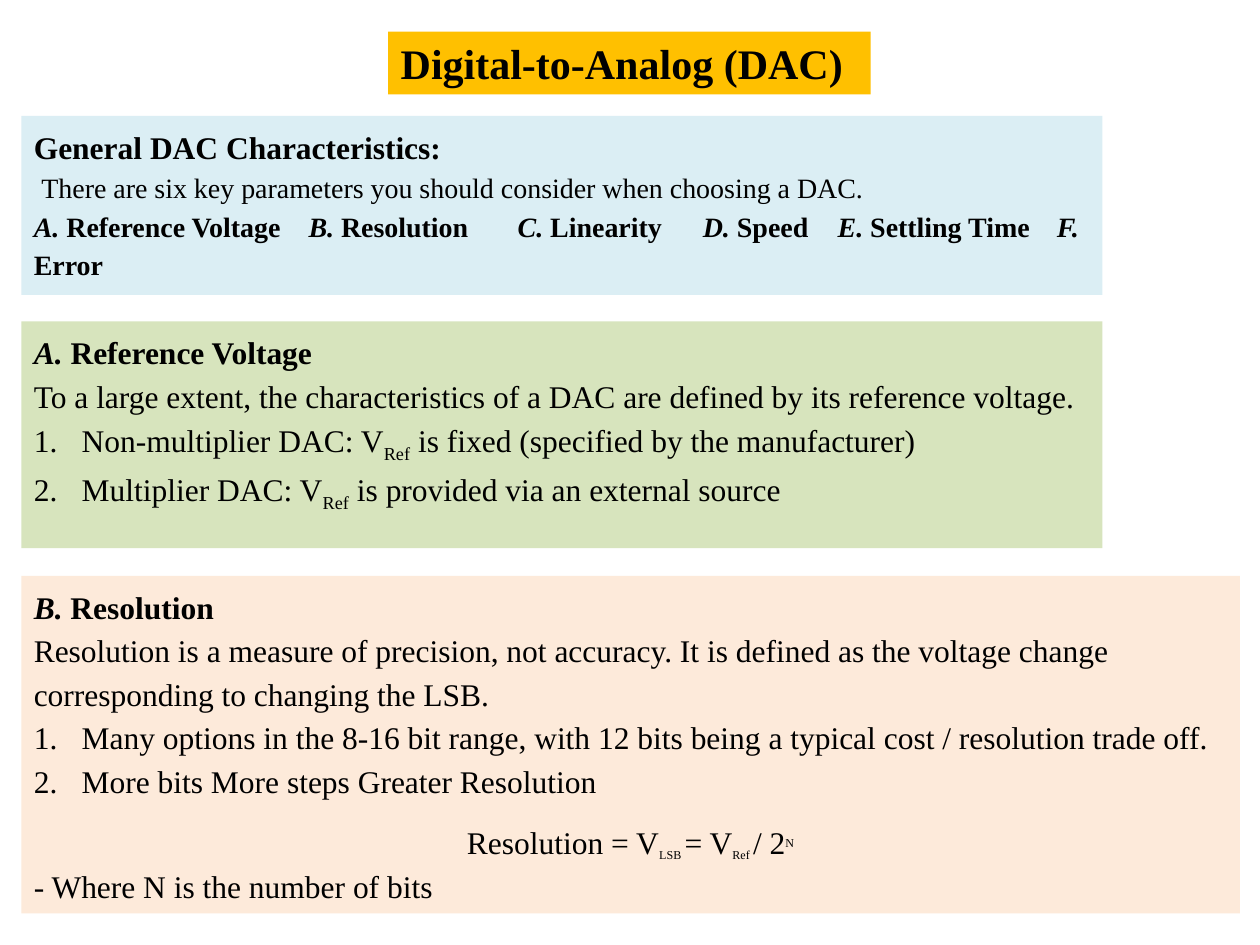
from lxml import etree
from pptx import Presentation
from pptx.dml.color import RGBColor
from pptx.enum.shapes import MSO_SHAPE
from pptx.enum.text import MSO_ANCHOR, MSO_AUTO_SIZE, PP_ALIGN
from pptx.oxml.ns import qn
from pptx.util import Inches, Pt

RECT = MSO_SHAPE.RECTANGLE
TOP = MSO_ANCHOR.TOP
NO_FIT = MSO_AUTO_SIZE.NONE
LEFT, CENTER = PP_ALIGN.LEFT, PP_ALIGN.CENTER

THEME = {
    "font": "Times New Roman", "text": "000000",
    "title_fill": "FFC000", "blue": "DBEEF4", "green": "D7E4BD", "peach": "FDEADA",
    "title": 24, "body": 18, "small": 16, "script": 12, "spacing": 1.15,
}
BASELINES = {"sub": "-25000", "super": "30000"}
LEFT_EDGE = 0.17
NUMBER_INDENT = 0.38

TITLE = "Digital-to-Analog (DAC)"
PARAMETERS = [("A.", "Reference Voltage"), ("B.", "Resolution"), ("C.", "Linearity"),
              ("D.", "Speed"), ("E.", "Settling Time"), ("F.", "Error")]
PARAMETER_TABS = [2.18, 3.84, 5.31, 6.38, 8.12]


def heading(letter, name):
    return {"runs": [(letter, "bold italic"), (" " + name, "bold")]}


def parameter_runs():
    runs = []
    for i, (letter, name) in enumerate(PARAMETERS):
        gap = "\t" if i < len(PARAMETERS) - 1 else ""
        runs += [(letter, "bold italic"), (f" {name}{gap}", "bold")]
    return runs


PANELS = [
    {"top": 0.92, "width": 8.58, "height": 1.42, "fill": "blue", "paragraphs": [
        {"runs": [("General DAC Characteristics:", "bold")]},
        {"size": "small", "margin": 0.06, "runs": [
            ("There are six key parameters you should consider when choosing a DAC.", "")]},
        {"size": "small", "tabs": PARAMETER_TABS, "runs": parameter_runs()},
    ]},
    {"top": 2.55, "width": 8.58, "height": 1.8, "fill": "green", "paragraphs": [
        heading(*PARAMETERS[0]),
        {"runs": [("To a large extent, the characteristics of a DAC are defined by "
                   "its reference voltage.", "")]},
        {"numbered": True, "runs": [
            ("Non-multiplier DAC: V", ""), ("Ref", "sub"),
            (" is fixed (specified by the manufacturer)", "")]},
        {"numbered": True, "runs": [
            ("Multiplier DAC: V", ""), ("Ref", "sub"),
            (" is provided via an external source", "")]},
    ]},
    {"top": 4.57, "width": 9.67, "height": 2.68, "fill": "peach", "paragraphs": [
        heading(*PARAMETERS[1]),
        {"runs": [("Resolution is a measure of precision, not accuracy. It is defined as "
                   "the voltage change corresponding to changing the LSB.", "")]},
        {"numbered": True, "runs": [
            ("Many options in the 8-16 bit range, with 12 bits being a typical cost / "
             "resolution trade off.", "")]},
        {"numbered": True, "after": 10, "runs": [
            ("More bits More steps Greater Resolution", "")]},
        {"align": CENTER, "runs": [
            ("Resolution = V", ""), ("LSB ", "sub script"), ("= V", ""),
            ("Ref ", "sub script"), ("/ 2", ""), ("N", "super script")]},
        {"after": 10, "runs": [("- Where N is the number of bits", "")]},
    ]},
]


def color(name):
    return RGBColor.from_string(THEME[name])


def place(sp, left, top, width, height):
    sp.left, sp.top = Inches(left), Inches(top)
    sp.width, sp.height = Inches(width), Inches(height)


def style_run(r, style, size):
    words = style.split()
    font = r.font
    font.name = THEME["font"]
    font.size = Pt(THEME["script" if "script" in words else size])
    font.color.rgb = color("text")
    font.bold = "bold" in words
    font.italic = "italic" in words
    for word in words:
        if word in BASELINES:
            r._r.get_or_add_rPr().set("baseline", BASELINES[word])


def add_paragraph(p, item):
    p.alignment = item.get("align", LEFT)
    p.line_spacing = THEME["spacing"]
    p.space_after = Pt(item.get("after", 0))
    pPr = p._p.get_or_add_pPr()
    if "margin" in item:
        pPr.set("marL", str(Inches(item["margin"])))
    if item.get("numbered"):
        pPr.set("marL", str(Inches(NUMBER_INDENT)))
        pPr.set("indent", str(-Inches(NUMBER_INDENT)))
        etree.SubElement(pPr, qn("a:buFont"), typeface="+mj-lt")
        etree.SubElement(pPr, qn("a:buAutoNum"), type="arabicPeriod")
    if "tabs" in item:
        tabs = etree.SubElement(pPr, qn("a:tabLst"))
        for pos in item["tabs"]:
            etree.SubElement(tabs, qn("a:tab"), pos=str(Inches(pos)), algn="l")
    for text, style in item["runs"]:
        r = p.add_run()
        r.text = text
        style_run(r, style, item.get("size", "body"))


def add_title(s):
    sp = s.shapes.title
    place(sp, 3.08, 0.25, 3.83, 0.5)
    sp.fill.solid()
    sp.fill.fore_color.rgb = color("title_fill")
    tf = sp.text_frame
    tf.text = TITLE
    tf.word_wrap = True
    tf.auto_size = NO_FIT
    tf.vertical_anchor = TOP
    p = tf.paragraphs[0]
    p.alignment = LEFT
    style_run(p.runs[0], "bold", "title")


def add_panel(s, panel):
    sp = s.shapes.add_shape(RECT, 0, 0, 0, 0)
    place(sp, LEFT_EDGE, panel["top"], panel["width"], panel["height"])
    sp.shadow.inherit = False
    sp.fill.solid()
    sp.fill.fore_color.rgb = color(panel["fill"])
    sp.line.fill.background()
    tf = sp.text_frame
    tf.word_wrap = True
    tf.auto_size = NO_FIT
    tf.vertical_anchor = TOP
    for i, item in enumerate(panel["paragraphs"]):
        add_paragraph(tf.add_paragraph() if i else tf.paragraphs[0], item)


def main():
    prs = Presentation()
    prs.slide_width, prs.slide_height = Inches(10), Inches(7.5)
    s = prs.slides.add_slide(prs.slide_layouts[5])
    add_title(s)
    for panel in PANELS:
        add_panel(s, panel)
    prs.save("out.pptx")


if __name__ == "__main__":
    main()
